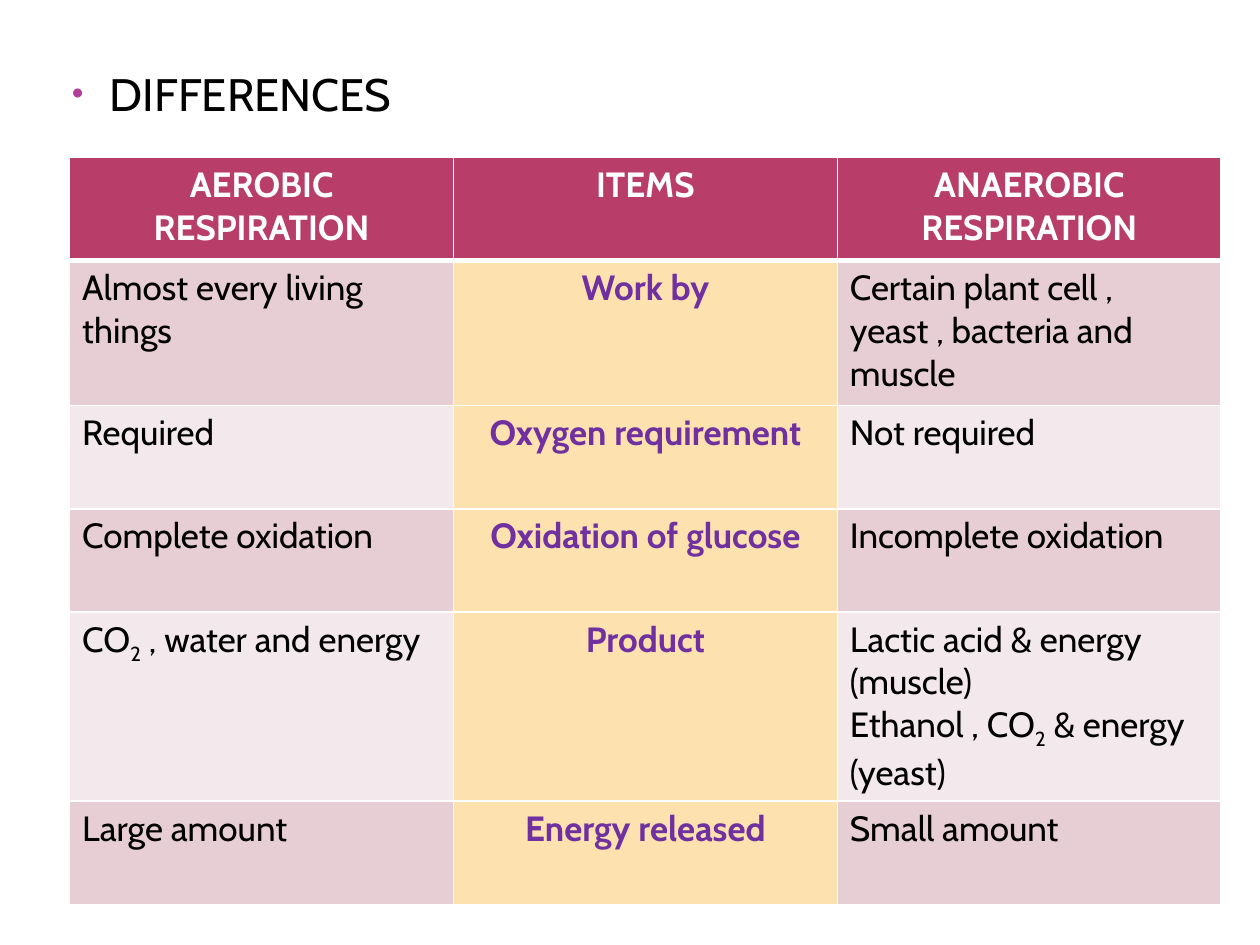
import pptx
import pptx.util
import pptx.dml.color
import pptx.enum.text
import pptx.oxml
import pptx.oxml.ns
from lxml import etree

Pt = pptx.util.Pt
ALIGN = pptx.enum.text.PP_ALIGN

HEADER = ["AEROBIC RESPIRATION", "ITEMS", "ANAEROBIC RESPIRATION"]
# Text between bars is set as subscript
ROWS = [
    ["Almost every living things", "Work by",
     "Certain plant cell , yeast , bacteria and muscle"],
    ["Required", "Oxygen requirement", "Not required"],
    ["Complete oxidation", "Oxidation of glucose", "Incomplete oxidation"],
    ["CO|2| , water and energy", "Product",
     "Lactic acid & energy (muscle)\nEthanol , CO|2| & energy (yeast)"],
    ["Large amount", "Energy released", "Small amount"],
]
COLUMN_WIDTH = 219.36
ROW_HEIGHTS = [59, 82.8, 59, 59, 108, 59]


def color(hex_string):
    return pptx.dml.color.RGBColor.from_string(hex_string)


def add_element(parent, tag, **attributes):
    element = etree.SubElement(parent, pptx.oxml.ns.qn(tag))
    for name, value in attributes.items():
        element.set(name, str(value))
    return element


class SlideBuilder:
    font_name = "Cabin"
    heading_size = 26
    table_size = 20
    white, black = "FFFFFF", "000000"
    bullet_color = "B13F9A"
    header_fill = "B83D68"
    item_fill, item_text = "FDE2B0", "7030A0"
    band_fills = ["E6CED4", "F3E8EB"]

    def __init__(self, presentation):
        self.slide = presentation.slides.add_slide(presentation.slide_layouts[5])

    def format_font(self, font, size, text_color, bold=False):
        font.name = self.font_name
        font.size = Pt(size)
        font.bold = bold
        font.color.rgb = color(text_color)

    def heading(self, text, left, top, width, height):
        title = self.slide.shapes.title
        title.left, title.top = Pt(left), Pt(top)
        title.width, title.height = Pt(width), Pt(height)
        frame = title.text_frame
        frame.text = text
        frame.word_wrap = True
        frame.auto_size = pptx.enum.text.MSO_AUTO_SIZE.NONE
        frame.vertical_anchor = pptx.enum.text.MSO_ANCHOR.TOP
        paragraph = frame.paragraphs[0]
        paragraph.alignment = ALIGN.LEFT
        paragraph.space_before = Pt(0)
        # Hanging bullet
        properties = paragraph._p.get_or_add_pPr()
        properties.set("marL", str(Pt(21.6)))
        properties.set("indent", str(-Pt(21.6)))
        bullet = add_element(properties, "a:buClr")
        add_element(bullet, "a:srgbClr", val=self.bullet_color)
        add_element(properties, "a:buSzPct", val=73000)
        add_element(properties, "a:buFont", typeface="Arial")
        add_element(properties, "a:buChar", char="•")
        self.format_font(paragraph.runs[0].font, self.heading_size, self.black)

    def table(self, rows, left, top, column_width, row_heights):
        column_count = len(rows[0])
        table = self.slide.shapes.add_table(
            len(rows), column_count, Pt(left), Pt(top),
            Pt(column_width * column_count), Pt(sum(row_heights))).table
        table.horz_banding = False
        for column in table.columns:
            column.width = Pt(column_width)
        for row, height in zip(table.rows, row_heights):
            row.height = Pt(height)
        for row_index, texts in enumerate(rows):
            for column_index, text in enumerate(texts):
                cell = table.cell(row_index, column_index)
                if row_index == 0:
                    self.cell(cell, text, self.header_fill, self.white, True)
                elif column_index == 1:
                    self.cell(cell, text, self.item_fill, self.item_text, True)
                else:
                    fill = self.band_fills[(row_index - 1) % 2]
                    self.cell(cell, text, fill, self.black, False)
                self.borders(cell, top=3 if row_index == 1 else 1,
                             bottom=3 if row_index == 0 else 1)

    def cell(self, cell, text, fill, text_color, emphasized):
        cell.fill.solid()
        cell.fill.fore_color.rgb = color(fill)
        frame = cell.text_frame
        frame.text = text.replace("|", "")
        for paragraph, line in zip(frame.paragraphs, text.split("\n")):
            paragraph.alignment = ALIGN.CENTER if emphasized else ALIGN.LEFT
            parts = line.split("|")
            paragraph.runs[0].text = parts[0]
            for part in parts[1:]:
                paragraph.add_run().text = part
            for index, run in enumerate(paragraph.runs):
                self.format_font(run.font, self.table_size, text_color, emphasized)
                if index % 2:
                    run._r.get_or_add_rPr().set("baseline", "-25000")

    def borders(self, cell, top, bottom):
        properties = cell._tc.get_or_add_tcPr()
        widths = {"a:lnL": 1, "a:lnR": 1, "a:lnT": top, "a:lnB": bottom}
        for index, (tag, width) in enumerate(widths.items()):
            line = add_element(properties, tag, w=Pt(width))
            fill = add_element(line, "a:solidFill")
            add_element(fill, "a:srgbClr", val=self.white)
            properties.insert(index, line)


def main():
    presentation = pptx.Presentation()
    presentation.slide_width, presentation.slide_height = Pt(720), Pt(540)
    builder = SlideBuilder(presentation)

    # Heading
    builder.heading("DIFFERENCES", 33.84, 33.84, 570, 48)

    # Comparison table
    builder.table([HEADER] + ROWS, 39.8, 90, COLUMN_WIDTH, ROW_HEIGHTS)

    presentation.save("out.pptx")


if __name__ == "__main__":
    main()
